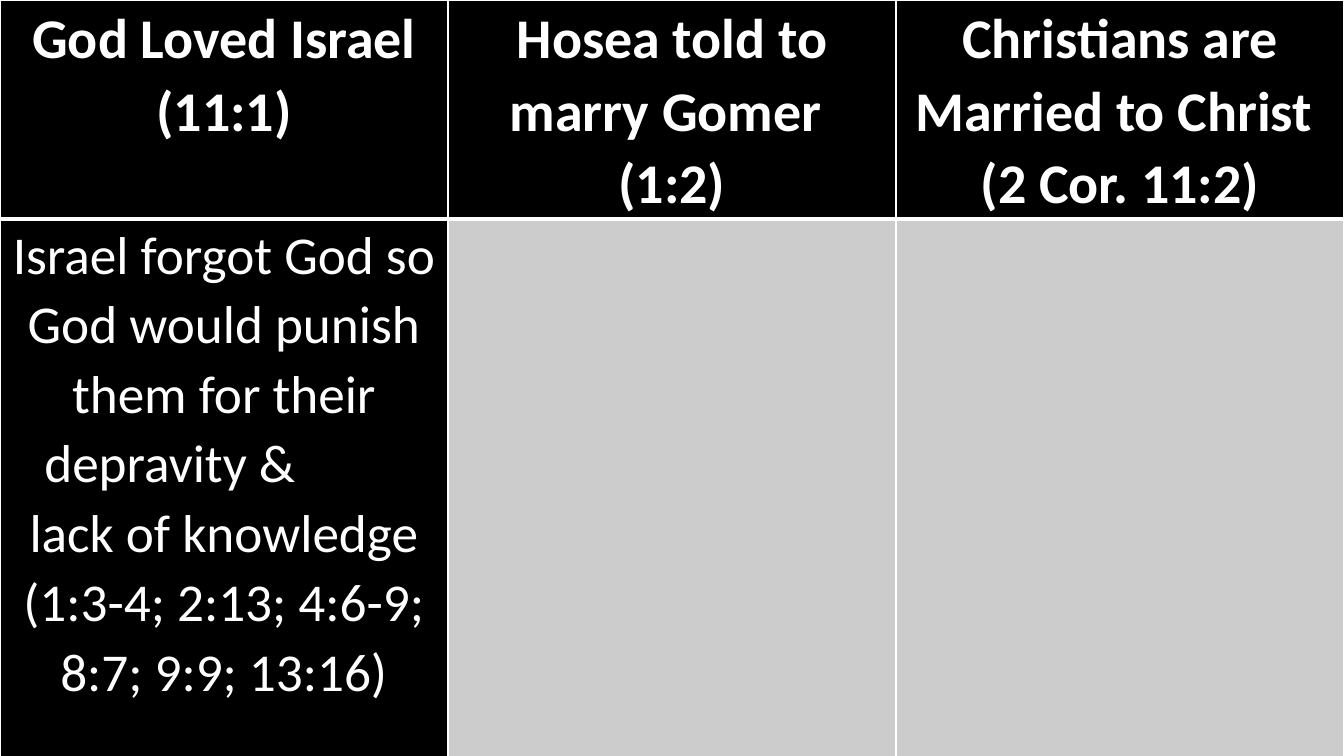
from lxml import etree
from pptx import Presentation
from pptx.dml.color import RGBColor
from pptx.enum import text
from pptx.oxml import ns
from pptx.util import Inches, Pt

BLACK, WHITE, GREY = "000000", "FFFFFF", "CCCCCC"
COLUMN_WIDTH = 13.33 / 3
ROW_HEIGHTS = [2.12, 5.38]

# Each cell is a list of (paragraph, left indent in inches); no indent means centred.
HEADINGS = [
    [("God Loved Israel (11:1)", None)],
    [("Hosea told to marry Gomer ", None), ("(1:2)", None)],
    [("Christians are Married to Christ \v(2 Cor. 11:2)", None)],
]
LESSONS = [
    [
        ("Israel forgot God so God would punish them for their", None),
        ("depravity &", 0.37),
        ("lack of knowledge", None),
        ("(1:3-4; 2:13; 4:6-9; 8:7; 9:9; 13:16)", None),
    ],
    [],
    [],
]


def paint(fill, color):
    fill.solid()
    fill.fore_color.rgb = RGBColor.from_string(color)


def write(paragraph, words, size=40, bold=False, color=WHITE, indent=None):
    paragraph.text = words
    paragraph.line_spacing = 1.07
    paragraph.alignment = text.PP_ALIGN.CENTER
    if indent is not None:
        paragraph.alignment = text.PP_ALIGN.LEFT
        paragraph._p.get_or_add_pPr().set("marL", str(Inches(indent)))
    for run in paragraph.runs:
        run.font.name = "Calibri"
        run.font.size = Pt(size)
        run.font.bold = bold
        run.font.color.rgb = RGBColor.from_string(color)


def add_borders(cell, widths):
    """Draw white borders; widths maps each side to points."""
    properties = cell._tc.get_or_add_tcPr()
    for side, width in widths.items():
        line = etree.SubElement(properties, ns.qn(f"a:ln{side}"), w=str(Pt(width)))
        solid = etree.SubElement(line, ns.qn("a:solidFill"))
        etree.SubElement(solid, ns.qn("a:srgbClr"), val=WHITE)


def fill_cell(cell, paragraphs, borders, size, bold):
    cell.margin_left = cell.margin_right = Inches(0.07)
    cell.margin_top = cell.margin_bottom = 0
    add_borders(cell, borders)
    paint(cell.fill, BLACK if paragraphs else GREY)
    frame = cell.text_frame
    for number, (words, indent) in enumerate(paragraphs):
        paragraph = frame.add_paragraph() if number else frame.paragraphs[0]
        write(paragraph, words, size=size, bold=bold, indent=indent)


def main():
    deck = Presentation()
    deck.slide_width, deck.slide_height = Inches(13.33), Inches(7.5)
    slide = deck.slides.add_slide(deck.slide_layouts[6])
    paint(slide.background.fill, BLACK)

    comparison = slide.shapes.add_table(
        len(ROW_HEIGHTS), len(HEADINGS), 0, 0, Inches(13.33), Inches(sum(ROW_HEIGHTS))
    ).table
    for column in comparison.columns:
        column.width = Inches(COLUMN_WIDTH)
    for row, height in zip(comparison.rows, ROW_HEIGHTS):
        row.height = Inches(height)

    for column, (heading, lesson) in enumerate(zip(HEADINGS, LESSONS)):
        fill_cell(comparison.cell(0, column), heading,
                  {"L": 1, "R": 1, "T": 1, "B": 3}, size=40, bold=True)
        fill_cell(comparison.cell(1, column), lesson,
                  {"L": 1, "R": 1, "T": 3, "B": 1}, size=38, bold=False)

    deck.save("out.pptx")


if __name__ == "__main__":
    main()
